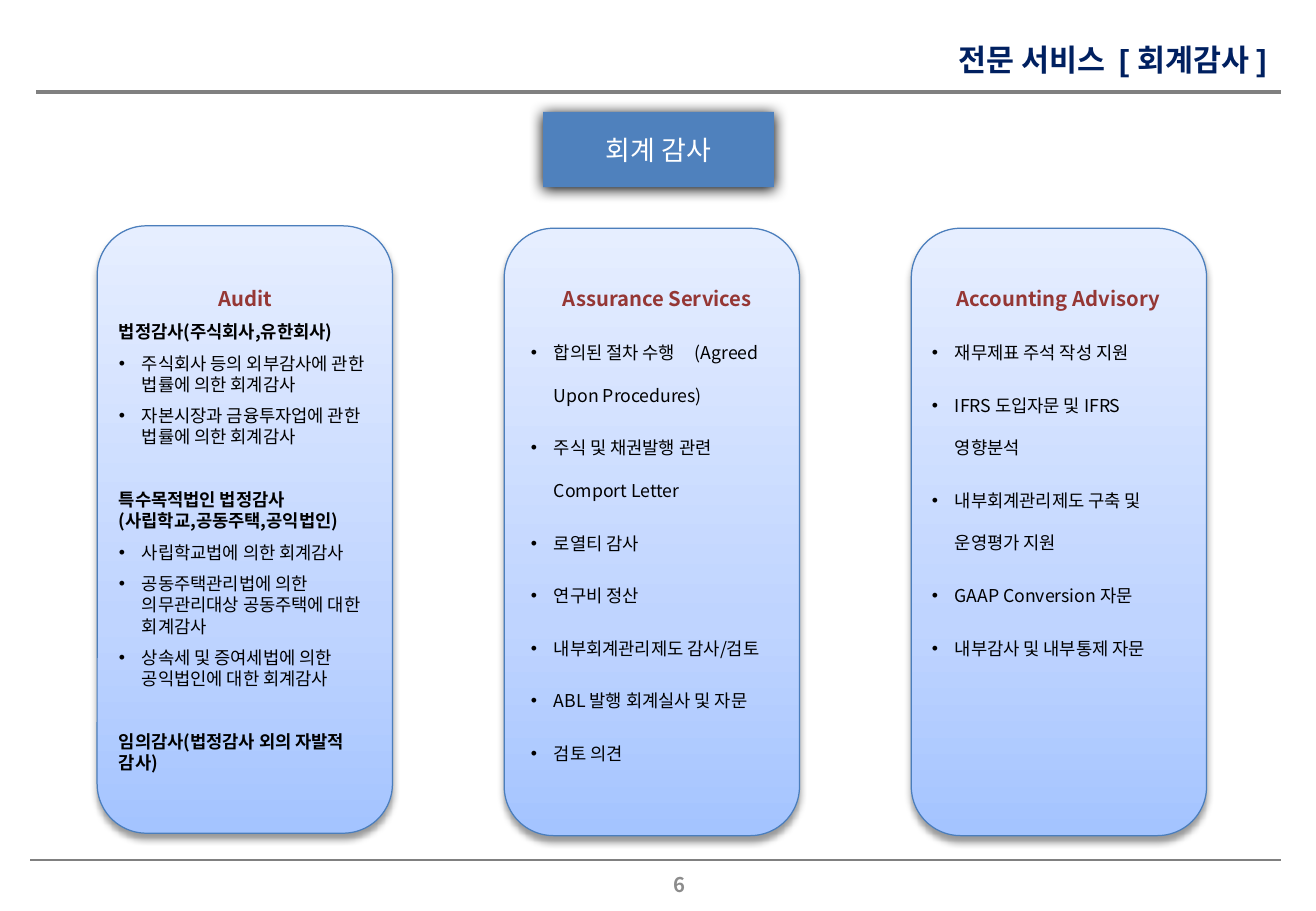
"""Build the accounting audit services slide with three service panels."""
from dataclasses import dataclass

from lxml import etree
from pptx import Presentation
from pptx.dml.color import RGBColor
from pptx.enum.shapes import MSO_CONNECTOR, MSO_SHAPE
from pptx.enum.text import MSO_ANCHOR, PP_ALIGN
from pptx.oxml import parse_xml
from pptx.oxml.ns import nsdecls, qn
from pptx.util import Inches, Pt

STRAIGHT = MSO_CONNECTOR.STRAIGHT
RECTANGLE, ROUNDED = MSO_SHAPE.RECTANGLE, MSO_SHAPE.ROUNDED_RECTANGLE
LEFT, CENTER, RIGHT = PP_ALIGN.LEFT, PP_ALIGN.CENTER, PP_ALIGN.RIGHT
TOP, MIDDLE = MSO_ANCHOR.TOP, MSO_ANCHOR.MIDDLE


@dataclass(frozen=True)
class Theme:
    font: str = "Noto Sans CJK KR"
    title_font: str = "Arial"
    navy: str = "002060"
    red: str = "953735"
    black: str = "000000"
    white: str = "FFFFFF"
    blue: str = "4F81BD"
    outline: str = "4B7EBC"
    rule: str = "808080"
    page: str = "8C8C8C"
    gradient: tuple = ((0, "A4C4FF"), (35, "BFD4FF"), (100, "E6EEFF"))
    title_size: float = 18
    topic_size: float = 16
    heading_size: float = 12
    body_size: float = 10.5


THEME = Theme()


def style(paragraph, size, color, bold=False, align=LEFT, font=THEME.font):
    paragraph.alignment = align
    for run in paragraph.runs:
        run.font.name = font
        run.font.size = Pt(size)
        run.font.bold = bold
        run.font.color.rgb = RGBColor.from_string(color)
        etree.SubElement(run.font._element, qn("a:ea"), typeface=THEME.font)


def add_shadow(shape, opacity, blur, distance):
    shape.shadow.inherit = False
    effects = shape._element.spPr.find(qn("a:effectLst"))
    effects.append(parse_xml(
        f'<a:outerShdw {nsdecls("a")} blurRad="{Pt(blur)}" dist="{Pt(distance)}" dir="5400000" '
        f'rotWithShape="0"><a:srgbClr val="{THEME.black}"><a:alpha val="{opacity * 1000}"/>'
        f'</a:srgbClr></a:outerShdw>'))


prs = Presentation()
prs.slide_width, prs.slide_height = Inches(10.83), Inches(7.5)
slide = prs.slides.add_slide(prs.slide_layouts[6])
shapes = slide.shapes

for start, y, weight in ((0.3, 0.76, 2.25), (0.25, 7.08, 1.5)):
    rule = shapes.add_connector(STRAIGHT, Inches(start), Inches(y), Inches(10.54), Inches(y))
    rule.line.color.rgb = RGBColor.from_string(THEME.rule)
    rule.line.width = Pt(weight)
    etree.SubElement(rule._element.spPr, qn("a:effectLst"))

captions = (
    ("6", (3.88, 7.08, 3.43, 0.4), MIDDLE, THEME.heading_size, THEME.page, CENTER, THEME.font),
    ("전문 서비스  [ 회계감사 ]", (6.83, 0.29, 3.69, 0.4), TOP,
     THEME.title_size, THEME.navy, RIGHT, THEME.title_font),
)
for text, place, anchor, size, color, align, font in captions:
    caption = shapes.add_textbox(*map(Inches, place)).text_frame
    caption.word_wrap = True
    caption.vertical_anchor = anchor
    caption.text = text
    style(caption.paragraphs[0], size, color, True, align, font)

SECTION, ITEM = "section", "item"
panels = (
    (1.86, 0.88, 4.51, "Audit", 1, (
        (SECTION, "법정감사(주식회사,유한회사)"),
        (ITEM, "주식회사 등의 외부감사에 관한 법률에 의한 회계감사"),
        (ITEM, "자본시장과 금융투자업에 관한 법률에 의한 회계감사"),
        (SECTION, "특수목적법인 법정감사\v(사립학교,공동주택,공익법인)"),
        (ITEM, "사립학교법에 의한 회계감사"),
        (ITEM, "공동주택관리법에 의한 의무관리대상 공동주택에 대한 회계감사"),
        (ITEM, "상속세 및 증여세법에 의한 공익법인에 대한 회계감사"),
        (SECTION, "임의감사(법정감사 외의 자발적 감사)"),
    )),
    (1.88, 4.27, 4.12, "Assurance Services", 2, (
        (ITEM, "합의된 절차 수행\t(Agreed Upon Procedures)"),
        (ITEM, "주식 및 채권발행 관련 Comport Letter"),
        (ITEM, "로열티 감사"),
        (ITEM, "연구비 정산"),
        (ITEM, "내부회계관리제도 감사/검토"),
        (ITEM, "ABL 발행 회계실사 및 자문"),
        (ITEM, "검토 의견"),
    )),
    (1.88, 7.57, 3.24, "Accounting Advisory", 2, (
        (ITEM, "재무제표 주석 작성 지원"),
        (ITEM, "IFRS 도입자문 및 IFRS 영향분석"),
        (ITEM, "내부회계관리제도 구축 및 운영평가 지원"),
        (ITEM, "GAAP Conversion 자문"),
        (ITEM, "내부감사 및 내부통제 자문"),
    )),
)
for column, (top, text_left, text_height, heading, spacing, entries) in enumerate(panels):
    panel = shapes.add_shape(ROUNDED, Inches(0.8 + 3.35 * column), Inches(top),
                             Inches(2.43), Inches(5))
    panel.fill.gradient()
    panel.fill.gradient_angle = 90
    stops = panel._element.spPr.find(qn("a:gradFill")).find(qn("a:gsLst"))
    stops.clear()
    for position, color in THEME.gradient:
        stop = etree.SubElement(stops, qn("a:gs"), pos=str(position * 1000))
        etree.SubElement(stop, qn("a:srgbClr"), val=color)
    panel.line.color.rgb = RGBColor.from_string(THEME.outline)
    panel.line.width = Pt(0.75)
    add_shadow(panel, 40, 4, 3)

    services = shapes.add_textbox(Inches(text_left), Inches(2.21),
                                  Inches(2.28), Inches(text_height)).text_frame
    services.word_wrap = True
    services.text = heading
    title = services.paragraphs[0]
    title.line_spacing = 1.5
    title.space_after = Pt(6)
    style(title, THEME.heading_size, THEME.red, True, CENTER)
    for index, (role, text) in enumerate(entries):
        entry = services.add_paragraph()
        entry.text = text
        entry.line_spacing = float(spacing)
        entry.space_after = Pt(6)
        if role == SECTION and index:
            entry.space_before = Pt(18.6)
        if role == ITEM:
            properties = entry._p.get_or_add_pPr()
            properties.set("marL", str(Inches(0.19)))
            properties.set("indent", str(-Inches(0.19)))
            etree.SubElement(properties, qn("a:buFont"), typeface="Arial")
            etree.SubElement(properties, qn("a:buChar"), char="•")
            if "\t" in text:
                tabs = etree.SubElement(properties, qn("a:tabLst"))
                etree.SubElement(tabs, qn("a:tab"), pos=str(Inches(1.35)), algn="l")
        style(entry, THEME.body_size, THEME.black, role == SECTION)

topic = shapes.add_shape(RECTANGLE, Inches(4.47), Inches(0.92), Inches(1.9), Inches(0.62))
topic.fill.solid()
topic.fill.fore_color.rgb = RGBColor.from_string(THEME.blue)
topic.line.fill.background()
add_shadow(topic, 100, 8.5, 1)
topic.text_frame.text = "회계 감사"
topic.text_frame.vertical_anchor = MIDDLE
style(topic.text_frame.paragraphs[0], THEME.topic_size, THEME.white, align=CENTER)

prs.save("out.pptx")
